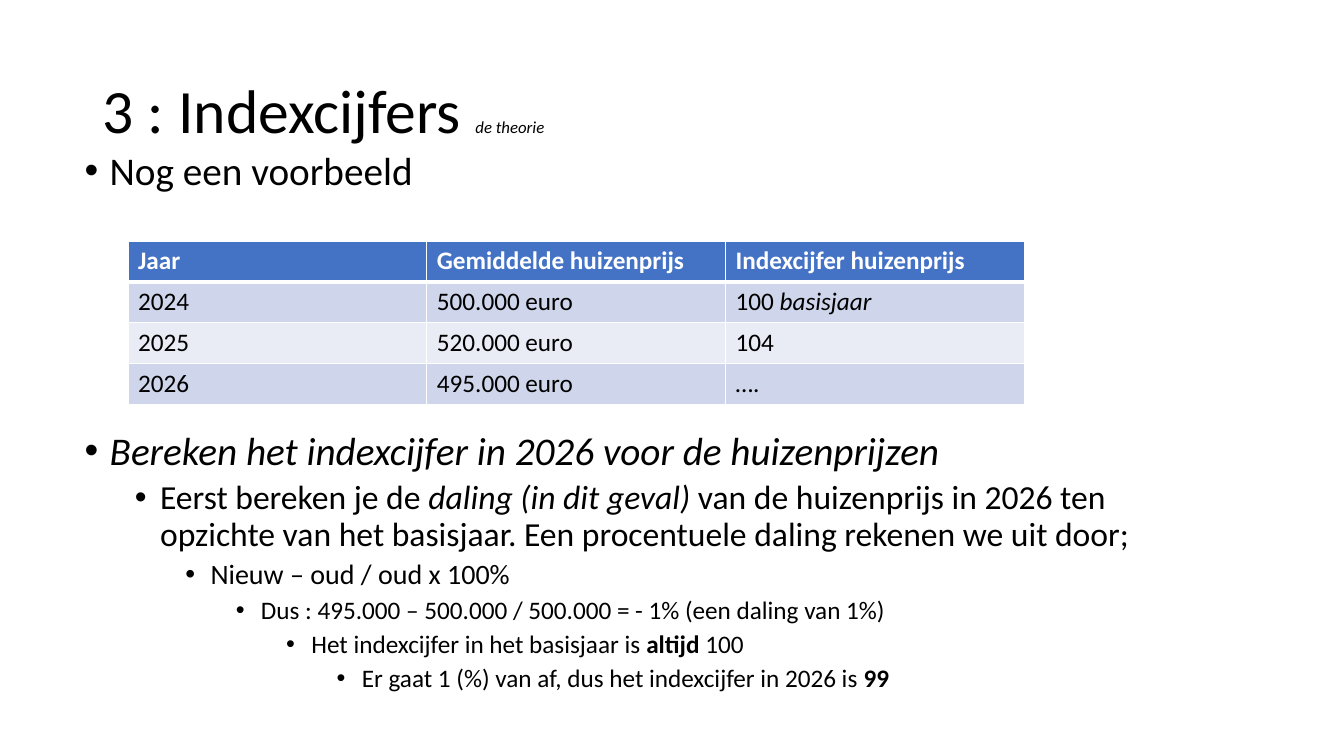
"""Build the slide on index numbers with a worked house price example."""
from pptx import Presentation
from pptx import util as u
from pptx.dml.color import RGBColor
from pptx.enum import text
from pptx.oxml.ns import qn
from lxml import etree

BLACK = RGBColor(0x00, 0x00, 0x00)
WHITE = RGBColor(0xFF, 0xFF, 0xFF)
HEADER_BLUE = RGBColor(0x44, 0x72, 0xC4)
BAND_DARK = RGBColor(0xCF, 0xD5, 0xEA)
BAND_LIGHT = RGBColor(0xE9, 0xEB, 0xF5)


def add_runs(paragraph, runs, color=BLACK):
    for words, formats in runs:
        run = paragraph.add_run()
        run.text = words
        run.font.name = "Calibri"
        run.font.color.rgb = color
        for name, value in formats.items():
            setattr(run.font, name, value)


def add_border(cell, side, points):
    line = etree.SubElement(cell._tc.get_or_add_tcPr(), qn(f"a:ln{side}"), w=str(u.Pt(points)))
    fill = etree.SubElement(line, qn("a:solidFill"))
    etree.SubElement(fill, qn("a:srgbClr"), val=str(WHITE))


presentation = Presentation()
presentation.slide_width = u.Inches(13.33)
presentation.slide_height = u.Inches(7.5)
slide = presentation.slides.add_slide(presentation.slide_layouts[5])

title = slide.shapes.title
title.left, title.top = u.Inches(0.92), u.Inches(0.4)
title.width, title.height = u.Inches(11.5), u.Inches(1.45)
title.text_frame.vertical_anchor = text.MSO_ANCHOR.MIDDLE
heading = title.text_frame.paragraphs[0]
heading.alignment = text.PP_ALIGN.LEFT
heading.line_spacing = 0.9
add_runs(heading, [
    ("3 : Indexcijfers ", {"size": u.Pt(44)}),
    ("de theorie", {"size": u.Pt(12), "italic": True}),
])

ITALIC = {"italic": True}
BOLD = {"bold": True}
bullets = [
    (0, 28, 0, [("Nog een voorbeeld", {})]),
    (0, 28, 170, [("Bereken het indexcijfer in 2026 voor de huizenprijzen", ITALIC)]),
    (1, 24, 5, [
        ("Eerst bereken je de ", {}),
        ("daling (in dit geval) ", ITALIC),
        ("van de huizenprijs in 2026 ten opzichte van het basisjaar. "
         "Een procentuele daling rekenen we uit door;", {}),
    ]),
    (2, 20, 5, [("Nieuw – oud / oud x 100%", {})]),
    (3, 18, 5, [("Dus : 495.000 – 500.000 / 500.000 = - 1% (een daling van 1%)", {})]),
    (4, 18, 5, [("Het indexcijfer in het basisjaar is ", {}), ("altijd ", BOLD), ("100", {})]),
    (5, 18, 5, [("Er gaat 1 (%) van af, dus het indexcijfer in 2026 is ", {}), ("99", BOLD)]),
]
body = slide.shapes.add_textbox(u.Inches(0.74), u.Inches(1.45), u.Inches(11.5), u.Inches(5.75))
frame = body.text_frame
frame.word_wrap = True
for index, (level, size, space, runs) in enumerate(bullets):
    paragraph = frame.add_paragraph() if index else frame.paragraphs[0]
    paragraph.level = level
    properties = paragraph._p.get_or_add_pPr()
    properties.set("marL", str(u.Inches(0.25 + 0.5 * level)))
    properties.set("indent", str(u.Inches(-0.25)))
    etree.SubElement(properties, qn("a:buFont"), typeface="Arial")
    etree.SubElement(properties, qn("a:buChar"), char="•")
    paragraph.line_spacing = 0.9
    if space:
        paragraph.space_before = u.Pt(space)
    add_runs(paragraph, [(words, {"size": u.Pt(size), **formats}) for words, formats in runs])

rows = [
    ["Jaar", "Gemiddelde huizenprijs", "Indexcijfer huizenprijs"],
    ["2024", "500.000 euro", "100 "],
    ["2025", "520.000 euro", "104"],
    ["2026", "495.000 euro", "…."],
]
table = slide.shapes.add_table(
    len(rows), len(rows[0]), u.Inches(1.27), u.Inches(2.39), u.Inches(8.89), u.Inches(1.62)
).table
for row_index, row in enumerate(rows):
    is_header = row_index == 0
    band = BAND_DARK if row_index % 2 else BAND_LIGHT
    for column_index, words in enumerate(row):
        cell = table.cell(row_index, column_index)
        for side in "LRTB":
            is_thick = (row_index, side) in [(0, "B"), (1, "T")]
            add_border(cell, side, 3 if is_thick else 1)
        cell.fill.solid()
        cell.fill.fore_color.rgb = HEADER_BLUE if is_header else band
        add_runs(cell.text_frame.paragraphs[0],
                 [(words, {"size": u.Pt(18), "bold": is_header})],
                 WHITE if is_header else BLACK)
add_runs(table.cell(1, 2).text_frame.paragraphs[0],
         [("basisjaar", {"size": u.Pt(18), "bold": False, "italic": True})])

presentation.save("out.pptx")
